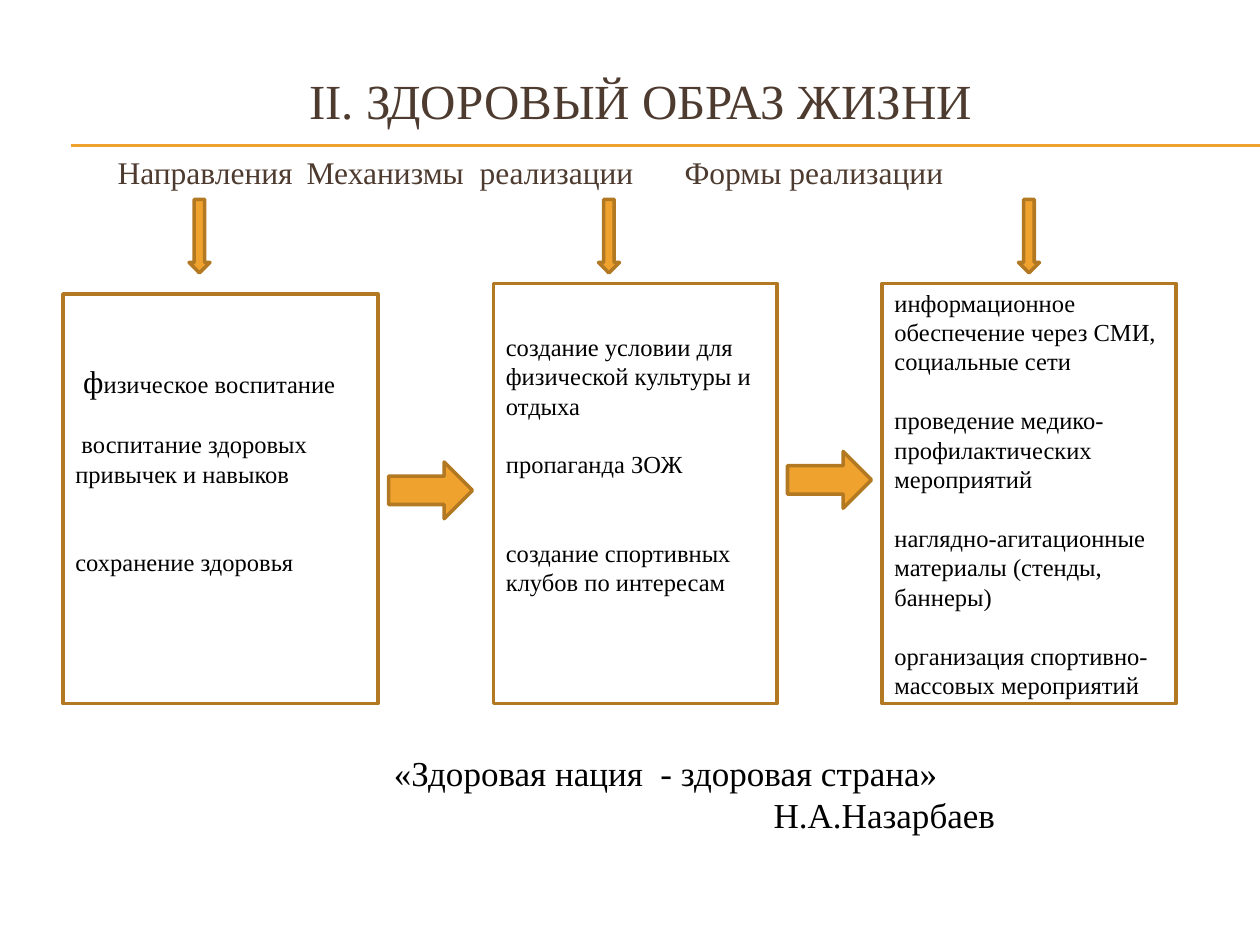
from dataclasses import dataclass

from lxml.etree import SubElement
from pptx import Presentation
from pptx.dml.color import RGBColor
from pptx.enum.shapes import MSO_CONNECTOR, MSO_SHAPE
from pptx.enum.text import MSO_ANCHOR, PP_ALIGN
from pptx.oxml.ns import qn
from pptx.util import Pt


@dataclass(frozen=True)
class Theme:
    font: str = "Times New Roman"
    brown: str = "4E3B30"
    gold: str = "F0A22E"
    edge: str = "B27822"
    ink: str = "000000"
    title: int = 28
    head: int = 18
    quote: int = 20
    text: int = 14


theme = Theme()


def add_run(para, text, size, color):
    run = para.add_run()
    run.text = text
    run.font.name = theme.font
    run.font.size = Pt(size)
    run.font.color.rgb = RGBColor.from_string(color)


def add_box(kind, left, top, width, height, fill=None):
    """Add an outlined shape, hollow unless a fill is given."""
    box = slide.shapes.add_shape(kind, Pt(left), Pt(top), Pt(width), Pt(height))
    box.shadow.inherit = False
    box.line.color.rgb = RGBColor.from_string(theme.edge)
    box.line.width = Pt(2)
    if fill:
        box.fill.solid()
        box.fill.fore_color.rgb = RGBColor.from_string(fill)
    else:
        box.fill.background()
    return box


prs = Presentation()
prs.slide_width, prs.slide_height = Pt(720), Pt(540)
slide = prs.slides.add_slide(prs.slide_layouts[1])

# Double rule under the title
for y in (82.8, 83.5):
    rule = slide.shapes.add_connector(
        MSO_CONNECTOR.STRAIGHT, Pt(40.5), Pt(y), Pt(720), Pt(y))
    rule.line.color.rgb = RGBColor.from_string(theme.gold)
    rule.line.width = Pt(0.75)
    SubElement(rule._element.spPr, qn("a:effectLst"))

# Title
title = slide.shapes.title
title.left, title.top, title.width, title.height = Pt(24), Pt(36), Pt(684), Pt(42)
title.text_frame.vertical_anchor = MSO_ANCHOR.MIDDLE
para = title.text_frame.paragraphs[0]
para.alignment = PP_ALIGN.CENTER
add_run(para, "ІІ. ЗДОРОВЫЙ ОБРАЗ ЖИЗНИ", theme.title, theme.brown)

# Column heads, set on tab stops
body = slide.placeholders[1]
body.left, body.top, body.width, body.height = Pt(24), Pt(84), Pt(684), Pt(414)
para = body.text_frame.paragraphs[0]
para.space_before = Pt(3.6)
props = para._p.get_or_add_pPr()
props.set("marL", "0")
props.set("indent", "0")
SubElement(props, qn("a:buNone"))
tabs = SubElement(props, qn("a:tabLst"))
heads = [("Направления", 36), ("Механизмы  реализации", 265.5),
         ("Формы реализации", 517.5)]
for head, stop in heads:
    SubElement(tabs, qn("a:tab"), pos=str(Pt(stop)), algn="l")
    add_run(para, "\t" + head, theme.head, theme.brown)

# Columns: arrow left, box place, space under the text, (gap before, runs)
line = 16.8
columns = [
    (108, (36, 168, 180, 234), 2 * line, [
        (0, [(" ", theme.head), ("ф", theme.head),
             ("изическое воспитание", theme.text)]),
        (1, [(" воспитание здоровых привычек и навыков", theme.text)]),
        (2, [("сохранение здоровья", theme.text)])]),
    (342, (282, 162, 162, 240), 2 * line, [
        (0, [("создание условии для физической культуры и отдыха", theme.text)]),
        (1, [("пропаганда ЗОЖ", theme.text)]),
        (2, [("создание спортивных клубов по интересам", theme.text)])]),
    (582, (504, 162, 168, 240), 0, [
        (0, [("информационное обеспечение через СМИ, социальные сети", theme.text)]),
        (1, [("проведение медико-профилактических мероприятий", theme.text)]),
        (1, [("наглядно-агитационные материалы (стенды, баннеры)", theme.text)]),
        (1, [("организация спортивно-массовых мероприятий", theme.text)])]),
]
for left, place, below, items in columns:
    add_box(MSO_SHAPE.DOWN_ARROW, left, 114, 12, 42, theme.gold)
    frame = add_box(MSO_SHAPE.RECTANGLE, *place).text_frame
    frame.word_wrap = True
    frame.vertical_anchor = MSO_ANCHOR.MIDDLE
    frame.margin_bottom = Pt(3.6 + below)
    for i, (gap, runs) in enumerate(items):
        para = frame.add_paragraph() if i else frame.paragraphs[0]
        para.alignment = PP_ALIGN.LEFT
        para.space_before = Pt(gap * line)
        for text, size in runs:
            add_run(para, text, size, theme.ink)

# Arrows between the boxes
for left, top in ((222, 264), (450, 258)):
    add_box(MSO_SHAPE.RIGHT_ARROW, left, top, 48, 32.4, theme.gold)

# Quote and its author
frame = slide.shapes.add_textbox(Pt(60), Pt(426), Pt(624), Pt(55.4)).text_frame
frame.word_wrap = True
quote = [("«Здоровая нация  - здоровая страна»", 158), ("Н.А.Назарбаев", 375)]
for i, (text, indent) in enumerate(quote):
    para = frame.add_paragraph() if i else frame.paragraphs[0]
    para._p.get_or_add_pPr().set("marL", str(Pt(indent)))
    add_run(para, text, theme.quote, theme.ink)

prs.save("out.pptx")
